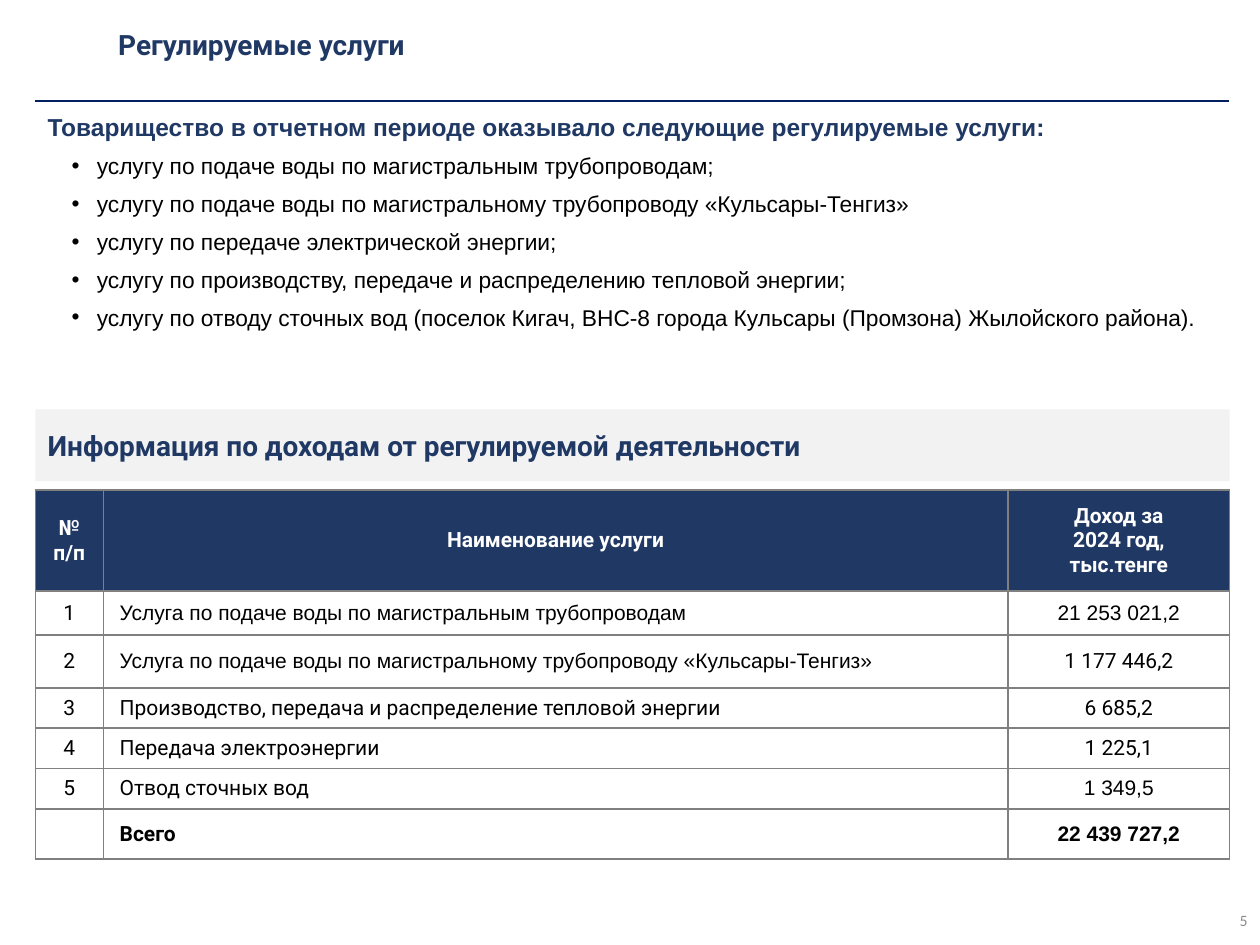
from lxml.etree import SubElement
from pptx import Presentation
from pptx.dml.color import RGBColor
from pptx.enum.shapes import MSO_CONNECTOR, MSO_SHAPE
from pptx.enum.text import MSO_ANCHOR, PP_ALIGN
from pptx.oxml.ns import qn
from pptx.util import Emu, Inches, Pt

NAVY, BLACK, WHITE = "203864", "000000", "FFFFFF"
LEFT, WIDTH = 2.8, 94.8

SERVICES = [
    "услугу по подаче воды по магистральным трубопроводам;",
    "услугу по подаче воды по магистральному трубопроводу «Кульсары-Тенгиз»",
    "услугу по передаче электрической энергии;",
    "услугу по производству, передаче и распределению тепловой энергии;",
    "услугу по отводу сточных вод (поселок Кигач, ВНС-8 города Кульсары "
    "(Промзона) Жылойского района).",
]
HEADINGS = ["№ п/п", "Наименование услуги", "Доход за\v2024 год,\vтыс.тенге"]
# Name, its font, income, its font
INCOME = [
    ("Услуга по подаче воды по магистральным трубопроводам", "Arial", "21 253 021,2", "Arial"),
    ("Услуга по подаче воды по магистральному трубопроводу «Кульсары-Тенгиз»", "Arial",
     "1 177 446,2", "Roboto"),
    ("Производство, передача и распределение тепловой энергии", "Roboto", "6 685,2", "Roboto"),
    ("Передача электроэнергии", "Roboto", "1 225,1", "Roboto"),
    ("Отвод сточных вод", "Roboto", "1 349,5", "Arial"),
    ("Всего", "Roboto", "22 439 727,2", "Arial"),
]


def color(hex_value):
    return RGBColor.from_string(hex_value)


def grid(units):
    """Length of grid units; the slide is 100 columns by 75 rows."""
    return Emu(round(Inches(0.1) * units))


class SlideBuilder:
    def __init__(self, presentation):
        self.slide = presentation.slides.add_slide(presentation.slide_layouts[6])
        self.shapes = self.slide.shapes

    def style(self, paragraph, size, font="Roboto", ink=NAVY, bold=False, align=PP_ALIGN.LEFT):
        paragraph.alignment = align
        for face in [paragraph.font] + [run.font for run in paragraph.runs]:
            face.name, face.size, face.bold = font, Pt(size), bold
            face.color.rgb = color(ink)

    def text(self, box, words, anchor=MSO_ANCHOR.MIDDLE, **style):
        frame = self.shapes.add_textbox(*map(grid, box)).text_frame
        frame.word_wrap = True
        frame.vertical_anchor = anchor
        frame.text = words
        self.style(frame.paragraphs[0], **style)
        return frame

    def bullet(self, frame, words, **style):
        paragraph = frame.add_paragraph()
        paragraph.text = words
        properties = paragraph._p.get_or_add_pPr()
        properties.set("marL", str(grid(3.9)))
        properties.set("indent", str(grid(-2)))
        SubElement(properties, qn("a:buFont"), typeface="Arial")
        SubElement(properties, qn("a:buChar"), char="•")
        paragraph.space_before = Pt(6)
        self.style(paragraph, **style)

    def band(self, box, words, fill, **style):
        band = self.shapes.add_shape(MSO_SHAPE.RECTANGLE, *map(grid, box))
        band.shadow.inherit = False
        band.fill.solid()
        band.fill.fore_color.rgb = color(fill)
        band.line.fill.background()
        band.text_frame.text = words
        band.text_frame.vertical_anchor = MSO_ANCHOR.MIDDLE
        self.style(band.text_frame.paragraphs[0], **style)

    def rule(self, left, top, right, ink):
        line = self.shapes.add_connector(
            MSO_CONNECTOR.STRAIGHT, *map(grid, (left, top, right, top)))
        line.line.color.rgb = color(ink)
        line.line.width = Pt(1)
        SubElement(line._element.spPr, qn("a:effectLst"))

    def table(self, left, top, widths, heights):
        box = (left, top, sum(widths), sum(heights))
        table = self.shapes.add_table(len(heights), len(widths), *map(grid, box)).table
        table.first_row = table.horz_banding = False
        for column, width in zip(table.columns, widths):
            column.width = grid(width)
        for row, height in zip(table.rows, heights):
            row.height = grid(height)
        return table

    def cell(self, cell, words, fill, margin=1.3, **style):
        properties = cell._tc.get_or_add_tcPr()
        for side in ("lnL", "lnR", "lnT", "lnB"):
            border = SubElement(properties, qn(f"a:{side}"), w=str(Pt(1)))
            SubElement(SubElement(border, qn("a:solidFill")), qn("a:srgbClr"), val="808080")
        cell.fill.solid()
        cell.fill.fore_color.rgb = color(fill)
        cell.margin_left = cell.margin_right = grid(margin)
        cell.vertical_anchor = MSO_ANCHOR.MIDDLE
        cell.text = words
        self.style(cell.text_frame.paragraphs[0], size=12, **style)


def main():
    presentation = Presentation()
    presentation.slide_width, presentation.slide_height = grid(100), grid(75)
    page = SlideBuilder(presentation)

    services = page.text(
        (LEFT, 8.4, WIDTH, 18.5),
        "Товарищество в отчетном периоде оказывало следующие регулируемые услуги:",
        anchor=MSO_ANCHOR.TOP, size=14, font="Arial", bold=True, align=PP_ALIGN.JUSTIFY)
    for service in SERVICES:
        page.bullet(services, service, size=13, font="Arial", ink=BLACK, align=PP_ALIGN.JUSTIFY)

    page.band((LEFT, 32.5, WIDTH, 5.7), "Информация по доходам от регулируемой деятельности",
              fill="F2F2F2", size=16, bold=True)

    income = page.table(LEFT, 38.9, widths=[5.4, 71.8, 17.6],
                        heights=[8, 3.5, 4.2, 3.2, 3.2, 3.2, 4])
    margins = [1.3, 1.3, 1]
    for column, (heading, margin) in enumerate(zip(HEADINGS, margins)):
        page.cell(income.cell(0, column), heading, NAVY, margin,
                  ink=WHITE, bold=True, align=PP_ALIGN.CENTER)
    for row, (name, name_font, value, value_font) in enumerate(INCOME, 1):
        is_total = row == len(INCOME)
        entries = [
            ("" if is_total else str(row), "Roboto", PP_ALIGN.CENTER),
            (name, name_font, PP_ALIGN.LEFT),
            (value, value_font, PP_ALIGN.CENTER),
        ]
        for column, (words, font, align) in enumerate(entries):
            page.cell(income.cell(row, column), words, WHITE, margins[column],
                      font=font, ink=BLACK, bold=is_total, align=align)

    page.text((77.5, 71, 22.5, 4), "5", size=9, font="Calibri", ink="8C8C8C",
              align=PP_ALIGN.RIGHT)
    page.text((8.4, 1.4, 89.3, 4.2), "Регулируемые услуги", size=16, bold=True)
    page.rule(LEFT, 8, 97.5, "002060")
    presentation.save("out.pptx")


if __name__ == "__main__":
    main()
